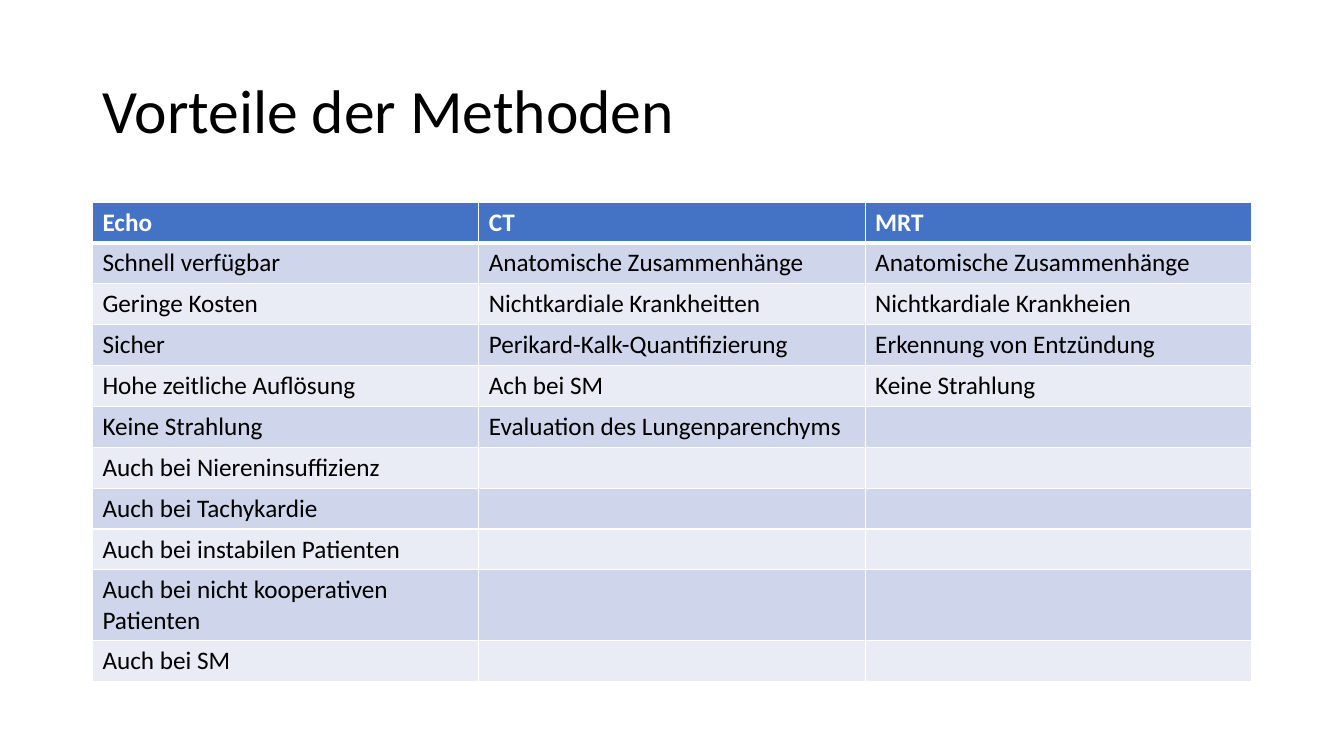
from dataclasses import dataclass
from itertools import zip_longest

from lxml import etree
from pptx import Presentation
from pptx.dml.color import RGBColor
from pptx.enum.text import MSO_ANCHOR
from pptx.oxml.ns import qn
from pptx.slide import Slide
from pptx.table import _Cell
from pptx.text.text import _Paragraph
from pptx.util import Cm, Pt

MIDDLE = MSO_ANCHOR.MIDDLE

BLACK = RGBColor(0x00, 0x00, 0x00)
WHITE = RGBColor(0xFF, 0xFF, 0xFF)
HEADER_BLUE = RGBColor(0x44, 0x72, 0xC4)
BAND_DARK = RGBColor(0xCF, 0xD5, 0xEA)
BAND_LIGHT = RGBColor(0xE9, 0xEB, 0xF5)

FONT_NAME = "Calibri"
BLANK_LAYOUT = 6
LEFT = Cm(2.33)
CONTENT_WIDTH = Cm(29.21)
ROW_HEIGHT = Cm(1.03)
THIN = Pt(1)
THICK = Pt(3)


@dataclass(frozen=True)
class Method:
    name: str
    advantages: tuple[str, ...]


@dataclass(frozen=True)
class RowStyle:
    fill: RGBColor
    font_color: RGBColor
    bold: bool
    top: int
    bottom: int


METHODS = (
    Method("Echo", (
        "Schnell verfügbar",
        "Geringe Kosten",
        "Sicher",
        "Hohe zeitliche Auflösung",
        "Keine Strahlung",
        "Auch bei Niereninsuffizienz",
        "Auch bei Tachykardie",
        "Auch bei instabilen Patienten",
        "Auch bei nicht kooperativen Patienten",
        "Auch bei SM",
    )),
    Method("CT", (
        "Anatomische Zusammenhänge",
        "Nichtkardiale Krankheitten",
        "Perikard-Kalk-Quantifizierung",
        "Ach bei SM",
        "Evaluation des Lungenparenchyms",
    )),
    Method("MRT", (
        "Anatomische Zusammenhänge",
        "Nichtkardiale Krankheien",
        "Erkennung von Entzündung",
        "Keine Strahlung",
    )),
)


def format_runs(paragraph: _Paragraph, size: int, color: RGBColor, bold: bool = False) -> None:
    for run in paragraph.runs:
        run.font.name = FONT_NAME
        run.font.size = Pt(size)
        run.font.bold = bold
        run.font.color.rgb = color


def add_title(slide: Slide, text: str) -> None:
    title = slide.shapes.add_textbox(LEFT, Cm(1.01), CONTENT_WIDTH, Cm(3.68))
    text_frame = title.text_frame
    text_frame.word_wrap = True
    text_frame.vertical_anchor = MIDDLE
    text_frame.text = text
    paragraph = text_frame.paragraphs[0]
    paragraph.line_spacing = 0.9
    format_runs(paragraph, 44, BLACK)


def set_borders(cell: _Cell, top: int, bottom: int) -> None:
    """Draw white borders; their elements must come before the cell fill."""
    properties = cell._tc.get_or_add_tcPr()
    widths = {"a:lnL": THIN, "a:lnR": THIN, "a:lnT": top, "a:lnB": bottom}
    for position, (tag, width) in enumerate(widths.items()):
        line = etree.Element(qn(tag), w=str(int(width)))
        fill = etree.SubElement(line, qn("a:solidFill"))
        etree.SubElement(fill, qn("a:srgbClr"), val=str(WHITE))
        properties.insert(position, line)


def row_style(row: int) -> RowStyle:
    if row == 0:
        return RowStyle(HEADER_BLUE, WHITE, True, THIN, THICK)
    fill = BAND_DARK if row % 2 else BAND_LIGHT
    return RowStyle(fill, BLACK, False, THICK if row == 1 else THIN, THIN)


def fill_cell(cell: _Cell, text: str, style: RowStyle) -> None:
    cell.text = text
    format_runs(cell.text_frame.paragraphs[0], 18, style.font_color, style.bold)
    cell.fill.solid()
    cell.fill.fore_color.rgb = style.fill
    set_borders(cell, style.top, style.bottom)


def add_method_table(slide: Slide, methods: tuple[Method, ...]) -> None:
    columns = [(method.name, *method.advantages) for method in methods]
    rows = list(zip_longest(*columns, fillvalue=""))
    table = slide.shapes.add_table(
        len(rows), len(columns), LEFT, Cm(5.09), CONTENT_WIDTH, ROW_HEIGHT * len(rows)
    ).table
    for row, texts in enumerate(rows):
        table.rows[row].height = ROW_HEIGHT
        for column, text in enumerate(texts):
            fill_cell(table.cell(row, column), text, row_style(row))


def main() -> None:
    presentation = Presentation()
    presentation.slide_width = Cm(33.87)
    presentation.slide_height = Cm(19.05)
    slide = presentation.slides.add_slide(presentation.slide_layouts[BLANK_LAYOUT])
    add_title(slide, "Vorteile der Methoden")
    add_method_table(slide, METHODS)
    presentation.save("out.pptx")


if __name__ == "__main__":
    main()
